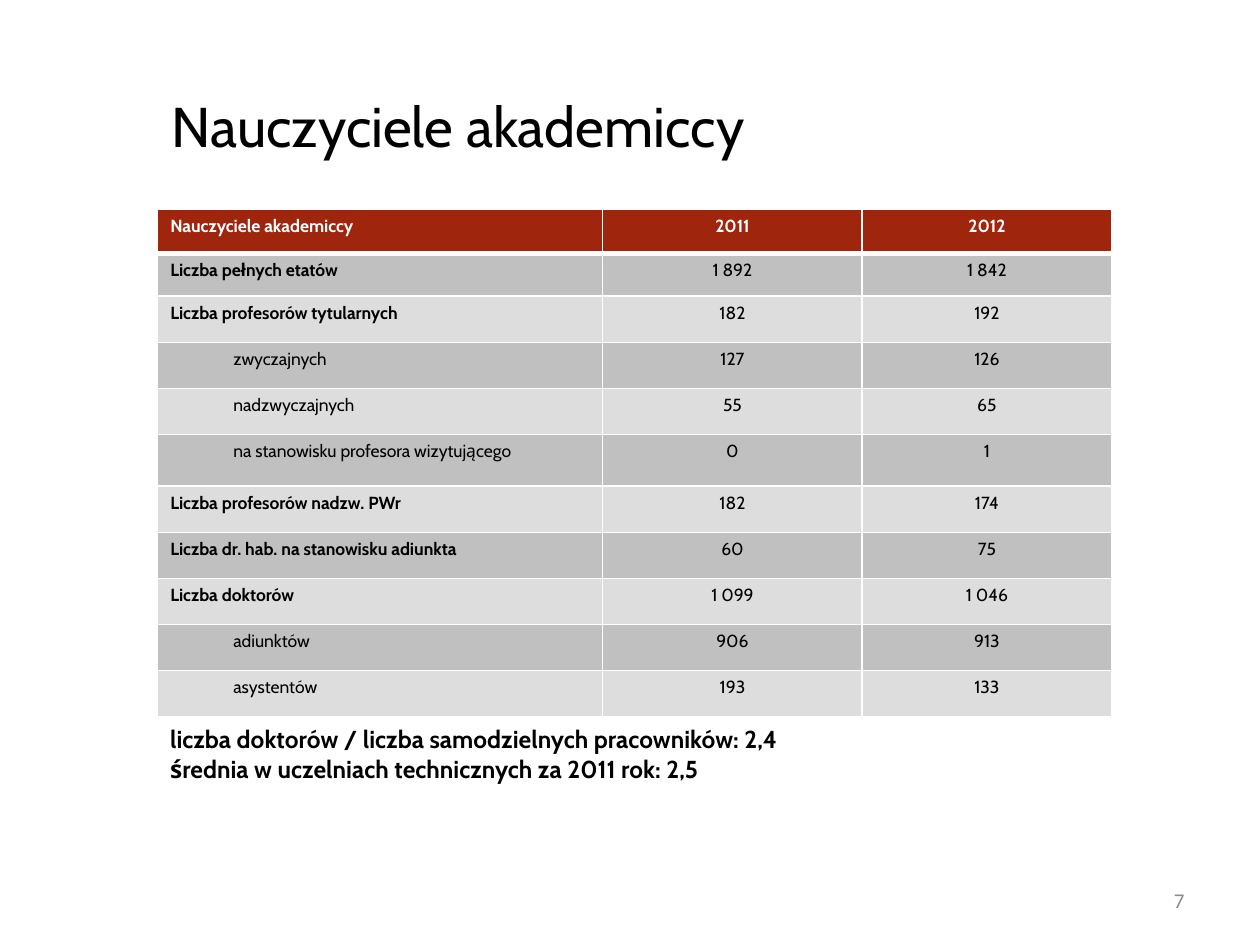
from lxml.etree import SubElement
from pptx import Presentation
from pptx.dml.color import RGBColor
from pptx.enum.text import MSO_ANCHOR, PP_ALIGN
from pptx.oxml.ns import qn
from pptx.util import Cm, Pt

FONT = "Cabin"
BLACK, WHITE, RED, GREY = "000000", "FFFFFF", "9F250D", "8C8C8C"
BANDS = ("C0C0C0", "DDDDDD")
COLUMN_WIDTHS = (8.97, 5.23, 5.03)
HEADER_HEIGHT, FIRST_HEIGHT, ROW_HEIGHT, TALL_HEIGHT = 0.89, 0.86, 0.93, 1.04
TALL_ROW = 5

HEADER = ("Nauczyciele akademiccy", "2011", "2012")
# Label, values for both years, whether the row is a subcategory
ROWS = (
    ("Liczba pełnych etatów", "1 892", "1 842", False),
    ("Liczba profesorów tytularnych", "182", "192", False),
    ("zwyczajnych", "127", "126", True),
    ("nadzwyczajnych", "55", "65", True),
    ("na stanowisku profesora wizytującego", "0", "1", True),
    ("Liczba profesorów nadzw. PWr", "182", "174", False),
    ("Liczba dr. hab. na stanowisku adiunkta", "60", "75", False),
    ("Liczba doktorów", "1 099", "1 046", False),
    ("adiunktów", "906", "913", True),
    ("asystentów", "193", "133", True),
)
SUMMARY = (
    "liczba doktorów / liczba samodzielnych pracowników: 2,4",
    "średnia w uczelniach technicznych za 2011 rok: 2,5",
)


def rgb(color):
    return RGBColor.from_string(color)


def format_paragraph(paragraph, size, color=BLACK, bold=False,
                     align=PP_ALIGN.LEFT, font=FONT):
    paragraph.alignment = align
    for run in paragraph.runs:
        run.font.name = font
        run.font.size = Pt(size)
        run.font.bold = bold
        run.font.color.rgb = rgb(color)


def set_indent(paragraph, left, first_line):
    properties = paragraph._p.get_or_add_pPr()
    properties.set("marL", str(Cm(left)))
    properties.set("indent", str(Cm(first_line)))


def set_borders(cell, top, bottom):
    """Draw white cell borders; top and bottom are widths in points."""
    properties = cell._tc.get_or_add_tcPr()
    for tag, width in (("a:lnL", 1), ("a:lnR", 1), ("a:lnT", top), ("a:lnB", bottom)):
        line = SubElement(properties, qn(tag), w=str(Pt(width)))
        fill = SubElement(line, qn("a:solidFill"))
        SubElement(fill, qn("a:srgbClr"), val=WHITE)


def fill_cell(cell, text, fill, top=1, bottom=1, **text_format):
    set_borders(cell, top, bottom)
    cell.fill.solid()
    cell.fill.fore_color.rgb = rgb(fill)
    cell.text_frame.text = text
    format_paragraph(cell.text_frame.paragraphs[0], 10, **text_format)


def add_title(slide, text):
    title = slide.shapes.title
    title.left, title.top, title.width, title.height = Cm(3.2), Cm(1.52), Cm(20.93), Cm(2.01)
    title.text_frame.text = text
    title.text_frame.vertical_anchor = MSO_ANCHOR.MIDDLE
    format_paragraph(title.text_frame.paragraphs[0], 32)


def add_staff_table(slide):
    heights = [HEADER_HEIGHT, FIRST_HEIGHT] + [ROW_HEIGHT] * (len(ROWS) - 1)
    heights[TALL_ROW] = TALL_HEIGHT
    table = slide.shapes.add_table(
        len(heights), len(COLUMN_WIDTHS), Cm(3.18), Cm(4.22),
        Cm(sum(COLUMN_WIDTHS)), Cm(sum(heights))).table
    for column, width in zip(table.columns, COLUMN_WIDTHS):
        column.width = Cm(width)
    for row, height in zip(table.rows, heights):
        row.height = Cm(height)

    for column, text in enumerate(HEADER):
        fill_cell(table.cell(0, column), text, RED, bottom=3, color=WHITE, bold=True,
                  align=PP_ALIGN.CENTER if column else PP_ALIGN.LEFT)
    for index, (label, *values, is_subcategory) in enumerate(ROWS):
        row = index + 1
        band = BANDS[index % 2]
        top = 3 if index == 0 else 1
        label_cell = table.cell(row, 0)
        fill_cell(label_cell, label, band, top, bold=not is_subcategory)
        if is_subcategory:
            paragraph = label_cell.text_frame.paragraphs[0]
            paragraph.level = 1
            set_indent(paragraph, 2.06, -0.79)
        for column, value in enumerate(values, start=1):
            fill_cell(table.cell(row, column), value, band, top, align=PP_ALIGN.CENTER)


def add_text_box(slide, left, top, width, height):
    text_frame = slide.shapes.add_textbox(Cm(left), Cm(top), Cm(width), Cm(height)).text_frame
    text_frame.word_wrap = True
    return text_frame


def add_summary(slide):
    text_frame = add_text_box(slide, 3.18, 14.48, 20.93, 1.45)
    text_frame.text = "\n".join(SUMMARY)
    for paragraph in text_frame.paragraphs:
        set_indent(paragraph, 0.95, -0.95)
        format_paragraph(paragraph, 14, bold=True)


def add_page_number(slide, number):
    text_frame = add_text_box(slide, 18.2, 17.65, 5.93, 1.01)
    text_frame.vertical_anchor = MSO_ANCHOR.MIDDLE
    text_frame.text = number
    format_paragraph(text_frame.paragraphs[0], 12, GREY, align=PP_ALIGN.RIGHT, font="Calibri")


def main():
    presentation = Presentation()
    presentation.slide_width, presentation.slide_height = Cm(25.4), Cm(19.05)
    slide = presentation.slides.add_slide(presentation.slide_layouts[5])
    add_title(slide, "Nauczyciele akademiccy")
    add_staff_table(slide)
    add_summary(slide)
    add_page_number(slide, "7")
    presentation.save("out.pptx")


if __name__ == "__main__":
    main()
